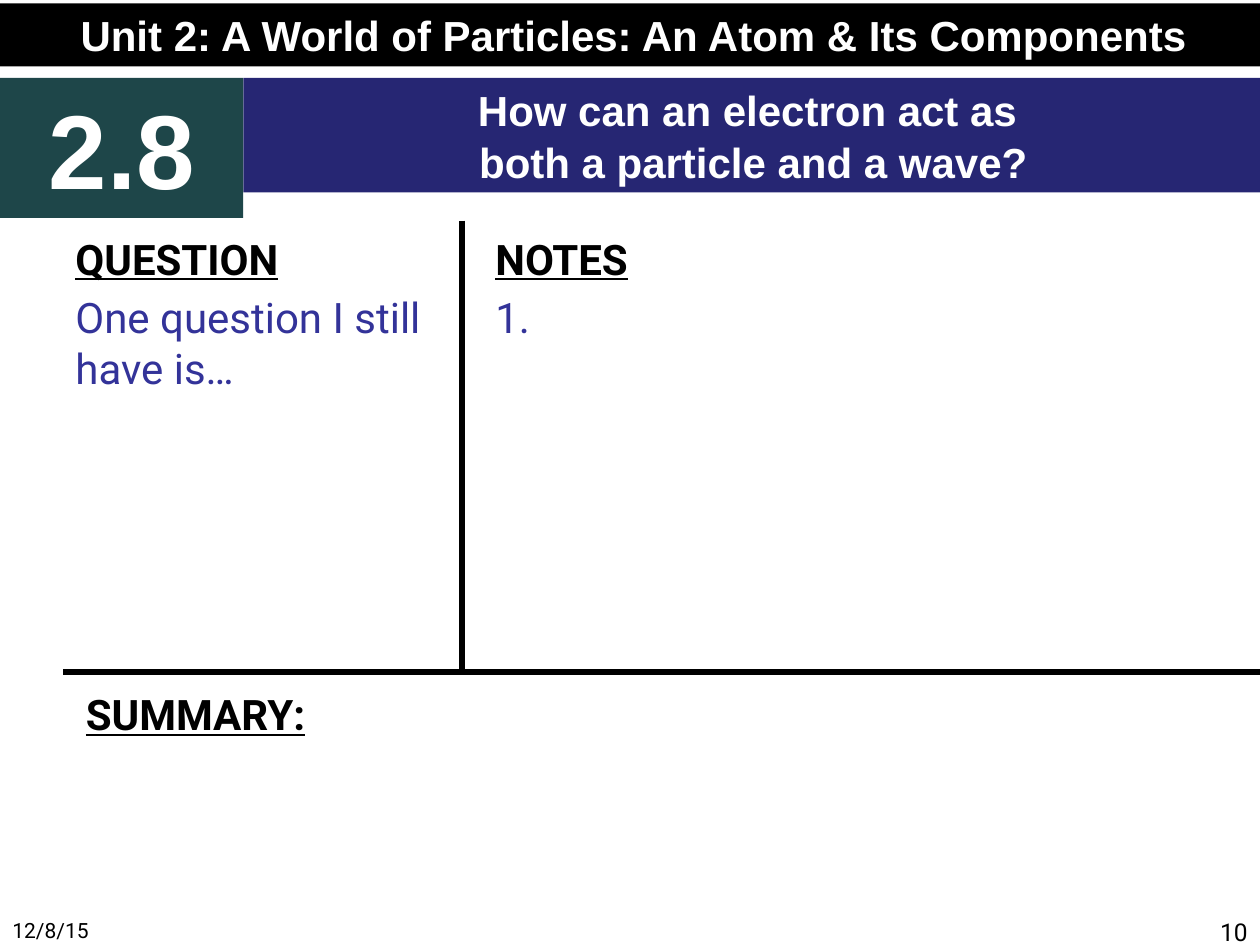
"""Build the Cornell-style study slide for lesson 2.8."""
from dataclasses import dataclass

from lxml.etree import SubElement
from pptx import Presentation
from pptx.dml.color import RGBColor
from pptx.enum.shapes import MSO_CONNECTOR, MSO_SHAPE
from pptx.enum.text import MSO_ANCHOR, PP_ALIGN
from pptx.oxml.ns import qn
from pptx.util import Pt


@dataclass(frozen=True)
class Theme:
    """Colours, fonts and type sizes."""
    black: str = "000000"
    white: str = "FFFFFF"
    teal: str = "1E4649"
    navy: str = "262673"
    prompt: str = "333399"
    banner_font: str = "Arial"
    body_font: str = "Roboto"
    lesson_size: int = 60
    text_size: int = 24
    number_size: int = 14
    date_size: int = 12
    paragraph_gap: float = 4.8
    rule_width: int = 3


def write_text(paragraph, text, *, font, size, color, bold=False,
               underline=False, align=PP_ALIGN.LEFT, gap=0, spacing=1.0):
    """Put formatted text into a paragraph."""
    paragraph.alignment = align
    paragraph.space_before = Pt(gap)
    paragraph.line_spacing = spacing
    run = paragraph.add_run()
    run.text = text
    run.font.name = font
    run.font.size = Pt(size)
    run.font.bold = bold
    run.font.underline = underline
    run.font.color.rgb = RGBColor.from_string(color)


class SlideBuilder:
    """Hold the theme and the slide, and add each kind of element."""

    def __init__(self, slide, theme):
        self.slide = slide
        self.theme = theme

    def fill_banner(self, shape, lines, color, size, spacing=1.0):
        """Fill a banner and centre its lines."""
        shape.fill.solid()
        shape.fill.fore_color.rgb = RGBColor.from_string(color)
        frame = shape.text_frame
        frame.word_wrap = True
        frame.vertical_anchor = MSO_ANCHOR.MIDDLE
        for index, line in enumerate(lines):
            paragraph = frame.add_paragraph() if index else frame.paragraphs[0]
            write_text(paragraph, line, font=self.theme.banner_font, size=size,
                       color=self.theme.white, bold=True,
                       align=PP_ALIGN.CENTER, spacing=spacing)

    def banner(self, text, left, top, width, height, color, size):
        """Add a filled rectangle with one line of text."""
        shape = self.slide.shapes.add_shape(
            MSO_SHAPE.RECTANGLE, Pt(left), Pt(top), Pt(width), Pt(height))
        shape.shadow.inherit = False
        shape.line.fill.background()
        self.fill_banner(shape, [text], color, size)

    def title(self, lines, left, top, width, height):
        """Move and format the title placeholder."""
        shape = self.slide.shapes.title
        shape.left, shape.top = Pt(left), Pt(top)
        shape.width, shape.height = Pt(width), Pt(height)
        self.fill_banner(shape, lines, self.theme.navy, self.theme.text_size, 1.03)

    def text_box(self, left, top, width, height):
        """Add a wrapping text box and return its frame."""
        frame = self.slide.shapes.add_textbox(
            Pt(left), Pt(top), Pt(width), Pt(height)).text_frame
        frame.word_wrap = True
        return frame

    def section(self, heading, prompt, left, top, width, height):
        """Add an underlined heading with an optional prompt below."""
        theme = self.theme
        frame = self.text_box(left, top, width, height)
        style = {"font": theme.body_font, "size": theme.text_size}
        write_text(frame.paragraphs[0], heading, color=theme.black,
                   bold=True, underline=True, **style)
        if prompt:
            write_text(frame.add_paragraph(), prompt, color=theme.prompt,
                       gap=theme.paragraph_gap, **style)

    def footer(self, text, left, size, align):
        """Add a small text at the foot of the slide."""
        frame = self.text_box(left, 520.5, 168, 19.5)
        write_text(frame.paragraphs[0], text, font=self.theme.body_font,
                   size=size, color=self.theme.black, align=align)

    def rule(self, start_x, start_y, end_x, end_y):
        """Add a straight dividing line."""
        connector = self.slide.shapes.add_connector(
            MSO_CONNECTOR.STRAIGHT, Pt(start_x), Pt(start_y), Pt(end_x), Pt(end_y))
        connector.line.color.rgb = RGBColor.from_string(self.theme.black)
        connector.line.width = Pt(self.theme.rule_width)
        SubElement(connector._element.spPr, qn("a:effectLst"))


def main():
    """Create the presentation and save it."""
    presentation = Presentation()
    presentation.slide_width, presentation.slide_height = Pt(720), Pt(540)
    theme = Theme()
    slide = presentation.slides.add_slide(presentation.slide_layouts[5])
    builder = SlideBuilder(slide, theme)

    builder.footer("12/8/15", 0, theme.date_size, PP_ALIGN.LEFT)
    builder.footer("10", 552, theme.number_size, PP_ALIGN.RIGHT)

    builder.banner("Unit 2: A World of Particles: An Atom & Its Components",
                   0, 2, 724, 36, theme.black, theme.text_size)
    builder.banner("2.8", 0, 44.5, 139, 80, theme.teal, theme.lesson_size)
    builder.title(["How can an electron act as ", "both a particle and a wave?"],
                  139, 44.5, 583, 65.5)

    builder.section("QUESTION", "One question I still have is…", 36, 129.6, 228, 248.4)
    builder.section("NOTES", "1.", 276, 129.6, 444, 248.4)
    builder.section("SUMMARY:", None, 42, 390, 678, 150)

    builder.rule(264, 126, 264, 384)
    builder.rule(720, 384, 36, 384)

    presentation.save("out.pptx")


if __name__ == "__main__":
    main()
